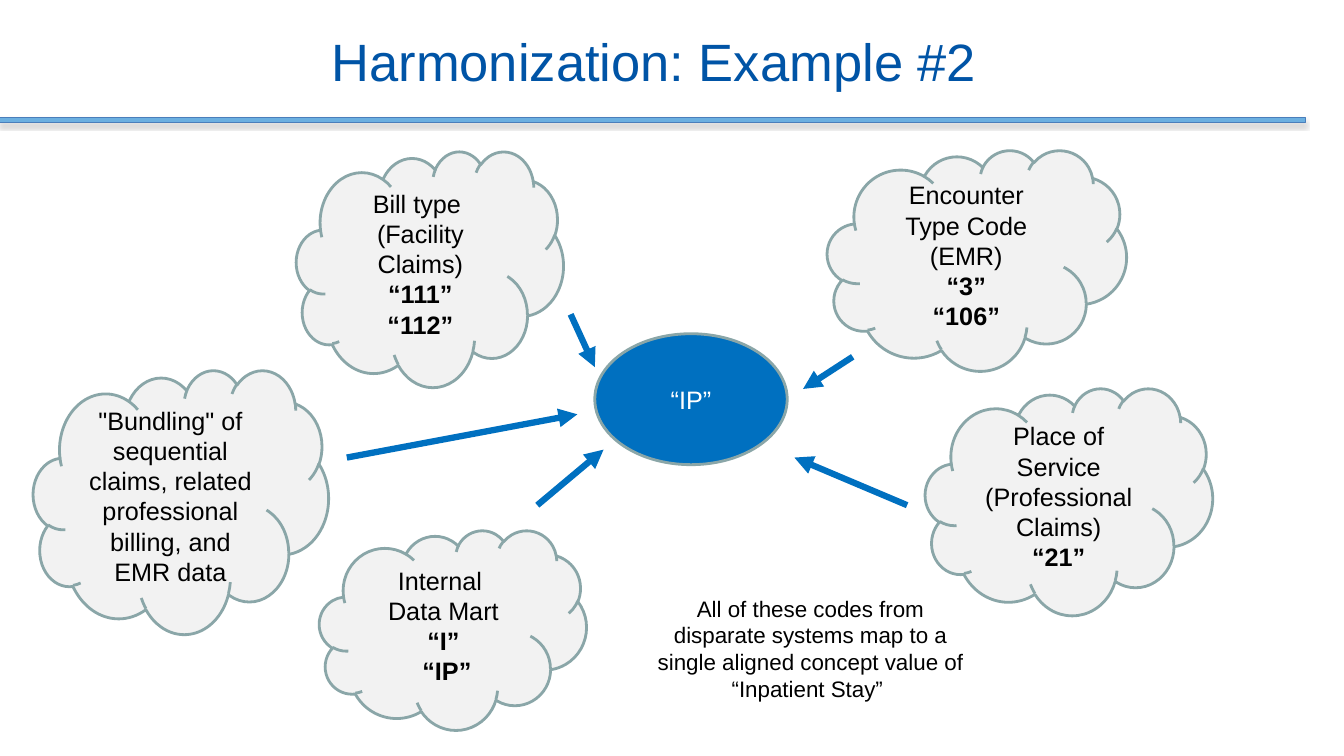
from dataclasses import dataclass

from lxml.etree import SubElement
from pptx import Presentation
from pptx.dml.color import RGBColor
from pptx.enum.shapes import MSO_CONNECTOR, MSO_SHAPE
from pptx.enum.text import MSO_ANCHOR, MSO_AUTO_SIZE, PP_ALIGN
from pptx.oxml.ns import qn
from pptx.util import Cm, Pt


@dataclass(frozen=True)
class Theme:
    font: str = "Arial"
    title: str = "0054A6"
    bar: str = "6BAFE0"
    bar_edge: str = "4A7EBB"
    shadow: str = "808080"
    cloud: str = "F2F2F2"
    edge: str = "8AA6A8"
    accent: str = "0070C0"
    dark: str = "000000"
    light: str = "FFFFFF"
    title_size: float = 37.5
    body_size: float = 18
    note_size: float = 16
    edge_width: float = 2
    arrow_width: float = 4.5


THEME = Theme()

# Cloud box, its paragraphs as (text, bold), arrow start and arrow end, in cm
SOURCES = [
    ((7.47, 0.31, 6.73, 5.94),
     [("Bill type ", False), ("(Facility Claims)", False), ("“111”", True), ("“112”", True)],
     (14.38, 4.42), (14.99, 5.75)),
    ((20.85, 0.28, 7.54, 5.56),
     [("Encounter Type Code (EMR)", False), ("“3”", True), ("“106”", True)],
     (21.49, 5.49), (20.24, 6.3)),
    ((8.05, 9.86, 6.73, 5.03),
     [("Internal \vData Mart", False), ("“I”", True), (" “IP”", True)],
     (13.54, 9.23), (15.21, 7.83)),
    ((23.32, 6.28, 7.24, 5.72),
     [("Place of Service", False), ("(Professional Claims)", False), ("“21”", True)],
     (22.86, 9.23), (20.02, 8.03)),
    ((0.84, 5.82, 7.44, 6.65),
     [('"Bundling" of sequential claims, related professional billing, and EMR data', False)],
     (8.74, 8.03), (14.55, 6.94)),
]
HUB = (14.99, 4.91, 4.85, 3.3)
NOTE = (16.21, 11.36, 8.43, 3)
NOTE_TEXT = ("All of these codes from disparate systems map to a single "
             "aligned concept value of “Inpatient Stay” ")


def rgb(value):
    return RGBColor.from_string(value)


def cm(values):
    return [Cm(v) for v in values]


def shift(box, origin):
    """Move a box or point by the left and top of the region it belongs to."""
    return (box[0] + origin[0], box[1] + origin[1], *box[2:])


def write(tf, paragraphs, size, color, align=PP_ALIGN.CENTER):
    """Fill a text frame with (text, bold) paragraphs in one style."""
    tf.word_wrap = True
    for i, (text, bold) in enumerate(paragraphs):
        p = tf.add_paragraph() if i else tf.paragraphs[0]
        p.text = text
        p.alignment = align
        for r in p.runs:
            style = {"name": THEME.font, "size": Pt(size), "bold": bold}
            for name, value in style.items():
                setattr(r.font, name, value)
            r.font.color.rgb = rgb(color)


def add_preset(s, kind, box, fill, edge, width):
    sp = s.shapes.add_shape(kind, *cm(box))
    sp.shadow.inherit = False
    sp.fill.solid()
    sp.fill.fore_color.rgb = rgb(fill)
    sp.line.color.rgb = rgb(edge)
    sp.line.width = Pt(width)
    sp.text_frame.vertical_anchor = MSO_ANCHOR.MIDDLE
    return sp


def add_arrow(s, start, end):
    line = s.shapes.add_connector(MSO_CONNECTOR.STRAIGHT, *cm(start + end))
    line.line.color.rgb = rgb(THEME.accent)
    line.line.width = Pt(THEME.arrow_width)
    SubElement(line.line._get_or_add_ln(), qn("a:tailEnd"), type="triangle")
    SubElement(line._element.spPr, qn("a:effectLst"))


def add_bar_shadow(bar):
    effects = bar._element.spPr.find(qn("a:effectLst"))
    outer = SubElement(effects, qn("a:outerShdw"), blurRad=str(Pt(3.1)),
                       dist=str(Pt(1.8)), dir="5400000", rotWithShape="0")
    color = SubElement(outer, qn("a:srgbClr"), val=THEME.shadow)
    SubElement(color, qn("a:alpha"), val="35000")


def add_header(s, box, title):
    """Place the title in the box and the rule along its bottom edge."""
    left, top, width, height = box
    bar = add_preset(s, MSO_SHAPE.RECTANGLE, (left, top + height, width, 0.13),
                     THEME.bar, THEME.bar_edge, 0.75)
    add_bar_shadow(bar)
    sp = s.shapes.title
    place = shift((8.1, 0.64, 23.75, 1.98), box)
    for name, value in zip(("left", "top", "width", "height"), cm(place)):
        setattr(sp, name, value)
    tf = sp.text_frame
    write(tf, [(title, False)], THEME.title_size, THEME.title, PP_ALIGN.LEFT)
    tf.auto_size = MSO_AUTO_SIZE.NONE
    tf.vertical_anchor = MSO_ANCHOR.MIDDLE
    tf.paragraphs[0].line_spacing = 0.9


def add_code_map(s, box):
    """Draw the source clouds, each with an arrow to the shared hub value."""
    for cloud_box, paragraphs, start, end in SOURCES:
        cloud = add_preset(s, MSO_SHAPE.CLOUD, shift(cloud_box, box),
                           THEME.cloud, THEME.edge, THEME.edge_width)
        write(cloud.text_frame, paragraphs, THEME.body_size, THEME.dark)
        add_arrow(s, shift(start, box), shift(end, box))
    hub = add_preset(s, MSO_SHAPE.OVAL, shift(HUB, box),
                     THEME.accent, THEME.edge, THEME.edge_width)
    write(hub.text_frame, [("“IP”", False)], THEME.body_size, THEME.light)
    note = s.shapes.add_textbox(*cm(shift(NOTE, box)))
    write(note.text_frame, [(NOTE_TEXT, False)], THEME.note_size, THEME.dark)


def main():
    prs = Presentation()
    prs.slide_width, prs.slide_height = cm((33.87, 19.05))
    s = prs.slides.add_slide(prs.slide_layouts[5])
    add_header(s, (0, 0, 32.89, 2.97), "Harmonization: Example #2")
    add_code_map(s, (0, 3.5, 33.87, 15.55))
    prs.save("out.pptx")


if __name__ == "__main__":
    main()
